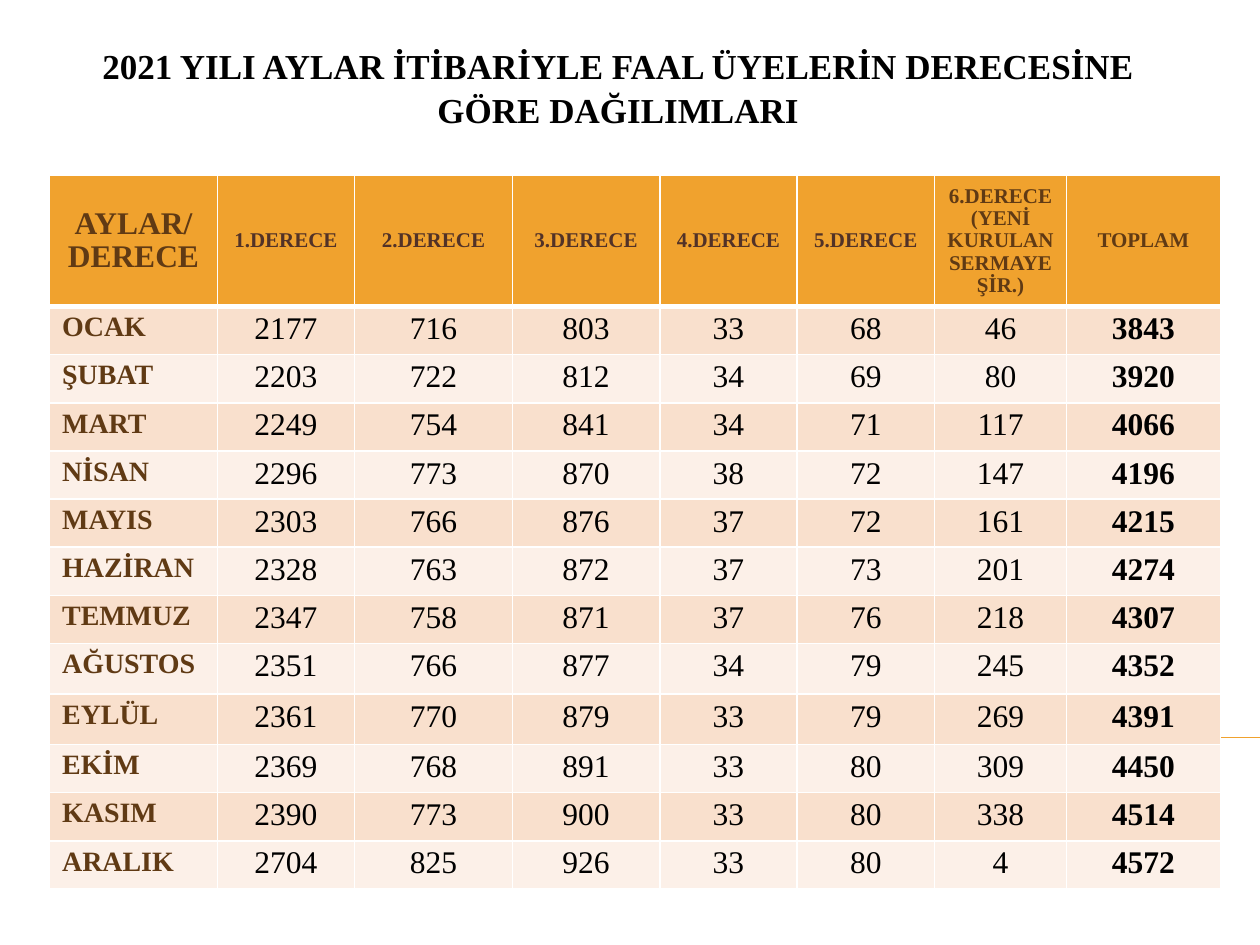
"""Builds the slide on active members by grade for each month of 2021."""
import pptx
import pptx.dml.color
import pptx.enum.shapes
import pptx.enum.text
import pptx.oxml
import pptx.oxml.ns
import pptx.util
from lxml import etree

Cm, Pt = pptx.util.Cm, pptx.util.Pt
ALIGN = pptx.enum.text.PP_ALIGN
ANCHOR = pptx.enum.text.MSO_ANCHOR
BLACK, WHITE, BROWN, DARK = "000000", "FFFFFF", "603A14", "523227"
ORANGE, BANDS = "F0A22E", ("F9E0CD", "FCF0E8")

TITLE = "2021 YILI AYLAR İTİBARİYLE FAAL ÜYELERİN DERECESİNE GÖRE DAĞILIMLARI"
GRADES = [f"{n}.DERECE" for n in range(1, 6)]
HEADER = ["AYLAR/ DERECE", *GRADES, "6.DERECE (YENİ KURULAN SERMAYE ŞİR.)", "TOPLAM"]
MONTHS = [
    ("OCAK", 2177, 716, 803, 33, 68, 46),
    ("ŞUBAT", 2203, 722, 812, 34, 69, 80),
    ("MART", 2249, 754, 841, 34, 71, 117),
    ("NİSAN", 2296, 773, 870, 38, 72, 147),
    ("MAYIS", 2303, 766, 876, 37, 72, 161),
    ("HAZİRAN", 2328, 763, 872, 37, 73, 201),
    ("TEMMUZ", 2347, 758, 871, 37, 76, 218),
    ("AĞUSTOS", 2351, 766, 877, 34, 79, 245),
    ("EYLÜL", 2361, 770, 879, 33, 79, 269),
    ("EKİM", 2369, 768, 891, 33, 80, 309),
    ("KASIM", 2390, 773, 900, 33, 80, 338),
    ("ARALIK", 2704, 825, 926, 33, 80, 4),
]
WIDTHS = [3.38, 2.77, 3.18, 2.97, 2.77, 2.77, 2.66, 3.1]
HEIGHTS = [2.64] + [0.97] * 7 + [1.02] * 2 + [0.97] * 3


def rgb(value):
    """Return the colour for a hex string."""
    return pptx.dml.color.RGBColor.from_string(value)


class Deck:
    """Holds the style and the current slide."""

    font = "Times New Roman"

    def __init__(self, prs):
        """Add a title-only slide."""
        self.s = prs.slides.add_slide(prs.slide_layouts[5])

    def text(self, tf, text, size, color, bold=True, align=ALIGN.CENTER, spacing=0.96):
        """Write one run into the first paragraph."""
        p = tf.paragraphs[0]
        p.alignment, p.line_spacing = align, spacing
        r = p.add_run()
        r.text = text
        r.font.name, r.font.size, r.font.bold = self.font, Pt(size), bold
        r.font.color.rgb = rgb(color)

    def title(self, text, x, y, w, h):
        """Place and fill the title placeholder."""
        sp = self.s.shapes.title
        sp.left, sp.top, sp.width, sp.height = Cm(x), Cm(y), Cm(w), Cm(h)
        tf = sp.text_frame
        tf.word_wrap, tf.vertical_anchor = True, ANCHOR.TOP
        tf.auto_size = pptx.enum.text.MSO_AUTO_SIZE.NONE
        self.text(tf, text, 20, BLACK, spacing=1.04)

    def line(self, x1, y1, x2, y2, color, width):
        """Draw a straight line without shadow."""
        kind = pptx.enum.shapes.MSO_CONNECTOR.STRAIGHT
        sp = self.s.shapes.add_connector(kind, Cm(x1), Cm(y1), Cm(x2), Cm(y2))
        sp.line.color.rgb, sp.line.width = rgb(color), Pt(width)
        etree.SubElement(sp._element.spPr, pptx.oxml.ns.qn("a:effectLst"))

    def borders(self, cell, top, bottom):
        """Give a cell white borders, with widths in points."""
        tcPr = cell._tc.get_or_add_tcPr()
        for side, width in (("L", 1), ("R", 1), ("T", top), ("B", bottom)):
            tcPr.append(pptx.oxml.parse_xml(
                f'<a:ln{side} {pptx.oxml.ns.nsdecls("a")} w="{Pt(width)}"><a:solidFill>'
                f'<a:srgbClr val="{WHITE}"/></a:solidFill></a:ln{side}>'))

    def cell(self, cell, text, fill, top=1, bottom=1, **style):
        """Format and fill one table cell."""
        self.borders(cell, top, bottom)
        cell.fill.solid()
        cell.fill.fore_color.rgb = rgb(fill)
        self.text(cell.text_frame, text, **style)

    def table(self, x, y):
        """Add the table of months by grade, with row totals."""
        sp = self.s.shapes.add_table(len(HEIGHTS), len(WIDTHS), Cm(x), Cm(y),
                                     Cm(sum(WIDTHS)), Cm(sum(HEIGHTS)))
        tbl = sp.table
        for column, width in zip(tbl.columns, WIDTHS):
            column.width = Cm(width)
        for row, height in zip(tbl.rows, HEIGHTS):
            row.height = Cm(height)
        for j, label in enumerate(HEADER):
            cell = tbl.cell(0, j)
            cell.vertical_anchor = ANCHOR.MIDDLE
            self.cell(cell, label, ORANGE, bottom=3, size=12 if j else 18,
                      color=DARK if label in GRADES else BROWN)
        for i, (month, *counts) in enumerate(MONTHS, 1):
            fill, top = BANDS[(i - 1) % 2], 3 if i == 1 else 1
            self.cell(tbl.cell(i, 0), month, fill, top, size=16, color=BROWN,
                      align=ALIGN.LEFT)
            for j, count in enumerate([*counts, sum(counts)], 1):
                self.cell(tbl.cell(i, j), str(count), fill, top, size=18,
                          color=BLACK, bold=j > len(counts))


def main():
    """Build and save the slide."""
    prs = pptx.Presentation()
    prs.slide_width, prs.slide_height = Cm(25.4), Cm(19.05)
    deck = Deck(prs)
    deck.line(1.42, 14.86, 25.4, 14.86, ORANGE, 0.75)
    deck.title(TITLE, 0.71, 0.74, 23.5, 1.6)
    deck.table(1, 3.54)
    prs.save("out.pptx")


if __name__ == "__main__":
    main()
